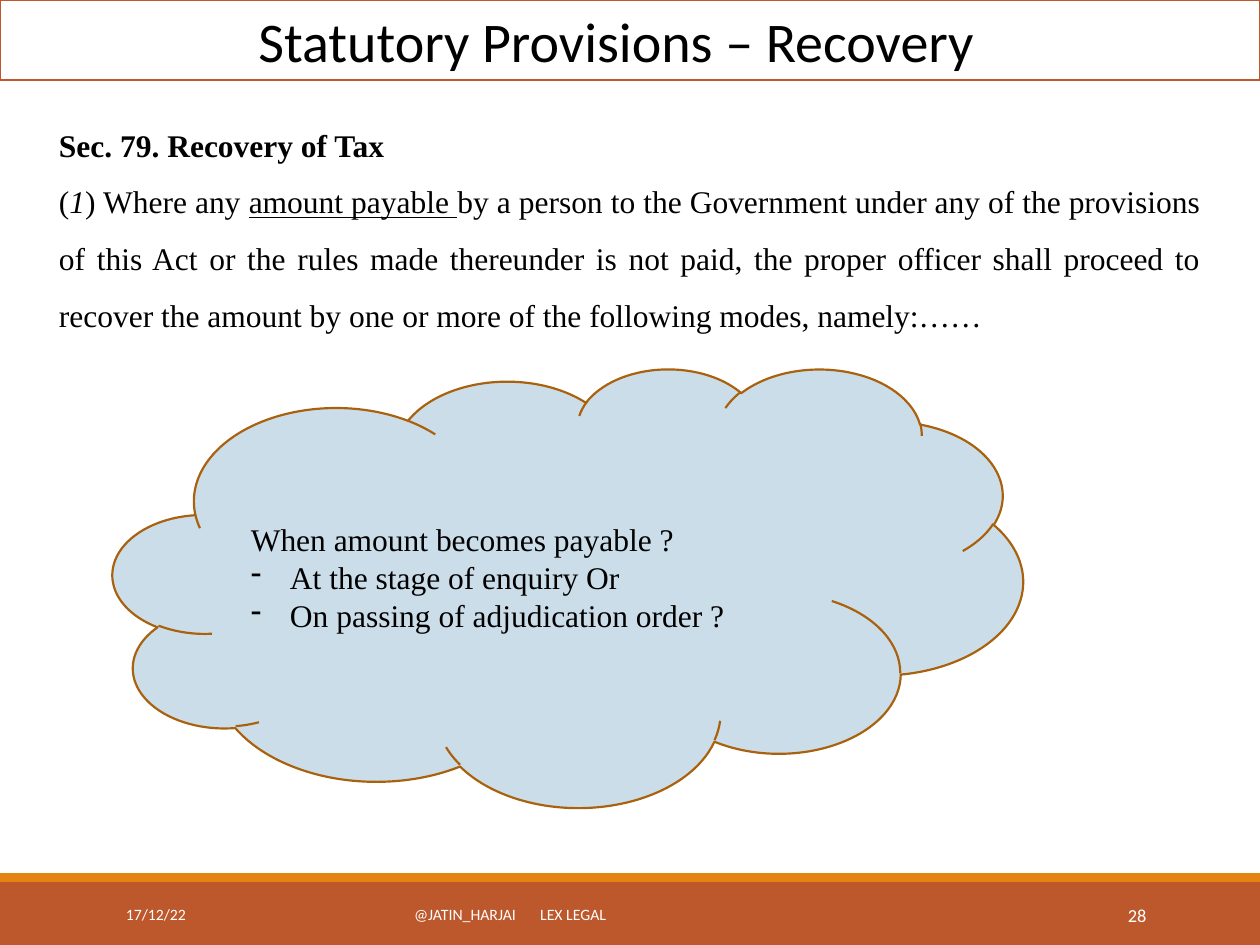
from lxml.etree import SubElement
from pptx import Presentation
from pptx.dml.color import RGBColor
from pptx.enum.shapes import MSO_SHAPE
from pptx.enum.text import MSO_ANCHOR, PP_ALIGN
from pptx.oxml.ns import qn
from pptx.util import Cm, Pt

BLACK = RGBColor(0x00, 0x00, 0x00)
WHITE = RGBColor(0xFF, 0xFF, 0xFF)
RUST = RGBColor(0xBD, 0x58, 0x2C)
ORANGE = RGBColor(0xE4, 0x83, 0x12)
BROWN = RGBColor(0xA9, 0x61, 0x0D)
PALE_BLUE = RGBColor(0xCC, 0xDD, 0xEA)

SERIF = "Times New Roman"
SANS = "Calibri"


def add_span(para, text, size=18, font=SERIF, color=BLACK, bold=False, italic=False, underline=False):
    span = para.add_run()
    span.text = text
    span.font.size = Pt(size)
    span.font.name = font
    span.font.color.rgb = color
    span.font.bold = bold
    span.font.italic = italic
    span.font.underline = underline


def set_indent(para, left, first=0):
    properties = para._p.get_or_add_pPr()
    properties.set("marL", str(Cm(left)))
    properties.set("indent", str(Cm(first)))
    return properties


def add_dash(para):
    properties = set_indent(para, 0.79, -0.79)
    SubElement(properties, qn("a:buChar")).set("char", "-")


def add_tab_stop(para, position):
    tabs = SubElement(para._p.get_or_add_pPr(), qn("a:tabLst"))
    SubElement(tabs, qn("a:tab"), pos=str(Cm(position)), algn="l")


class SlideBuilder:
    """Holds the current slide and draws its elements, with lengths in centimetres."""

    def __init__(self, slide):
        self.slide = slide

    def shape(self, kind, left, top, width, height, fill, line=None):
        shape = self.slide.shapes.add_shape(kind, Cm(left), Cm(top), Cm(width), Cm(height))
        shape.shadow.inherit = False
        shape.fill.solid()
        shape.fill.fore_color.rgb = fill
        if line is None:
            shape.line.fill.background()
        else:
            shape.line.color.rgb = line
            shape.line.width = Pt(1.25)
        return shape

    def text_box(self, left, top, width, height, anchor=MSO_ANCHOR.TOP):
        box = self.slide.shapes.add_textbox(Cm(left), Cm(top), Cm(width), Cm(height))
        box.text_frame.word_wrap = True
        box.text_frame.vertical_anchor = anchor
        return box

    def paragraphs(self, box, count, align=PP_ALIGN.LEFT, spacing=None):
        """Returns the given number of formatted, still empty paragraphs."""
        frame = box.text_frame
        paras = [frame.paragraphs[0]] + [frame.add_paragraph() for _ in range(count - 1)]
        for para in paras:
            para.alignment = align
            para.line_spacing = spacing
        return paras

    def title(self, text):
        bar = self.shape(MSO_SHAPE.RECTANGLE, 0, 0, 25.4, 1.62, WHITE, RUST)
        bar.text_frame.vertical_anchor = MSO_ANCHOR.TOP
        bar.text_frame.margin_right = Cm(0.8)
        [para] = self.paragraphs(bar, 1, PP_ALIGN.CENTER)
        add_span(para, text, size=32, font=SANS)

    def provision(self, heading, spans):
        box = self.text_box(0.94, 2.03, 23.52, 4.72)
        heading_para, body_para = self.paragraphs(box, 2, PP_ALIGN.JUSTIFY, 1.5)
        add_span(heading_para, heading, bold=True)
        for text, style in spans:
            add_span(body_para, text, **style)

    def cloud(self, question, options):
        cloud = self.shape(MSO_SHAPE.CLOUD, 2.28, 7.42, 18.34, 8.84, PALE_BLUE, BROWN)
        cloud.text_frame.vertical_anchor = MSO_ANCHOR.MIDDLE
        question_para, *option_paras = self.paragraphs(cloud, 1 + len(options))
        add_span(question_para, question)
        for para, option in zip(option_paras, options):
            add_dash(para)
            add_span(para, option)

    def footer_text(self, text, left, width, size=9, align=PP_ALIGN.LEFT):
        box = self.text_box(left, 17.93, width, 1.02, MSO_ANCHOR.MIDDLE)
        [para] = self.paragraphs(box, 1, align)
        add_span(para, text, size=size, font=SANS, color=WHITE)
        return para

    def footer(self, date, handle, firm, number):
        self.shape(MSO_SHAPE.RECTANGLE, 0, 17.78, 25.4, 1.27, RUST)
        self.shape(MSO_SHAPE.RECTANGLE, 0, 17.6, 25.4, 0.18, ORANGE)
        self.footer_text(date, 2.29, 5.16)
        credit = self.footer_text(f"{handle}\t{firm}", 7.67, 10.06)
        set_indent(credit, 0.43)
        add_tab_stop(credit, 7.78)
        self.footer_text(number, 20.62, 2.74, size=10.5, align=PP_ALIGN.RIGHT)


def main():
    deck = Presentation()
    deck.slide_width, deck.slide_height = Cm(25.4), Cm(19.05)
    page = SlideBuilder(deck.slides.add_slide(deck.slide_layouts[6]))

    page.footer("17/12/22", "@JATIN_HARJAI", "LEX LEGAL", "28")
    page.title("Statutory Provisions – Recovery")
    page.provision("Sec. 79. Recovery of Tax", [
        ("(", {}),
        ("1", {"italic": True}),
        (") Where any ", {}),
        ("amount payable ", {"underline": True}),
        ("by a person to the Government under any of the provisions of this Act or the rules made "
         "thereunder is not paid, the proper officer shall proceed to recover the amount by one or "
         "more of the following modes, namely:……", {}),
    ])
    page.cloud("When amount becomes payable ?",
               ["At the stage of enquiry Or", "On passing of adjudication order ?"])
    deck.save("out.pptx")


if __name__ == "__main__":
    main()
